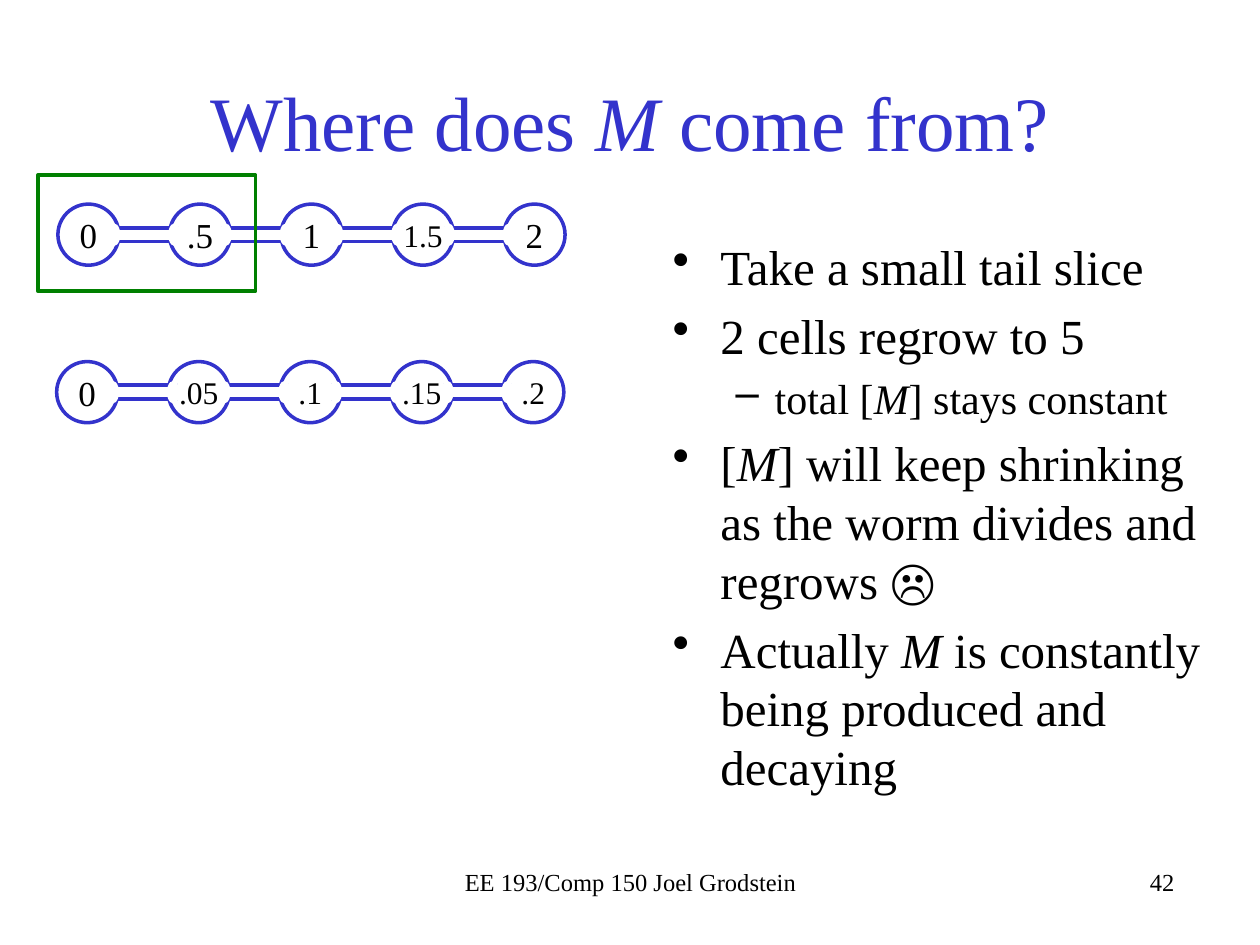
from typing import NamedTuple

from lxml import etree
from pptx import Presentation
from pptx.dml.color import RGBColor
from pptx.enum.shapes import MSO_SHAPE as Preset
from pptx.enum.text import MSO_ANCHOR as Anchor, PP_ALIGN as Align
from pptx.oxml.ns import qn
from pptx.util import Inches, Pt

FONT = "Times New Roman"
COLORS = {"blue": "3333CC", "green": "008000", "white": "FFFFFF", "black": "000000"}
CELL_PITCH, CELL_SIZE = 0.885, 0.485
BRIDGE_WIDTH, BRIDGE_HEIGHT = 0.52, 0.11
OPENING_WIDTH, OPENING_HEIGHT = 0.1, 0.18
OVERHANG = 0.01  # how far an opening reaches out of its cell


class Box(NamedTuple):
    left: float
    top: float
    width: float
    height: float

    def inches(self):
        return [Inches(length) for length in self]


class Worm(NamedTuple):
    left: float
    top: float
    cells: list[tuple[str, int]]  # concentration and its text size


class Bullet(NamedTuple):
    text: str  # every other part between asterisks is italic
    size: int
    mark: str
    margin: float
    hanging: float


WORMS = [
    Worm(0.46, 1.62, [("0", 20), (".5", 20), ("1", 20), ("1.5", 18), ("2", 20)]),
    Worm(0.45, 2.87, [("0", 20), (".05", 18), (".1", 18), (".15", 18), (".2", 18)]),
]
MAIN, SUB = (28, "•", 0.38, 0.38), (24, "–", 0.81, 0.31)
BULLETS = [
    Bullet("Take a small tail slice", *MAIN),
    Bullet("2 cells regrow to 5", *MAIN),
    Bullet("total [*M*] stays constant", *SUB),
    Bullet("[*M*] will keep shrinking as the worm divides and regrows ☹", *MAIN),
    Bullet("Actually *M* is constantly being produced and decaying", *MAIN),
]


def rgb(color: str) -> RGBColor:
    return RGBColor.from_string(COLORS[color])


def write(paragraph, text: str, size: int, color: str = "black", align=Align.LEFT) -> None:
    """Fill a paragraph, setting the parts between asterisks in italics."""
    for index, part in enumerate(text.split("*")):
        if part:
            run = paragraph.add_run()
            run.text = part
            if index % 2:
                run.font.italic = True
    paragraph.alignment = align
    paragraph.font.name, paragraph.font.size = FONT, Pt(size)
    paragraph.font.color.rgb = rgb(color)


def add_text(slide, box: Box, anchor=Anchor.TOP):
    frame = slide.shapes.add_textbox(*box.inches()).text_frame
    frame.word_wrap = True
    frame.vertical_anchor = anchor
    return frame


def add_outline(slide, preset, box: Box, line: str | None, fill: str | None = None):
    shape = slide.shapes.add_shape(preset, *box.inches())
    shape.shadow.inherit = False
    if fill:
        shape.fill.solid()
        shape.fill.fore_color.rgb = rgb(fill)
    else:
        shape.fill.background()
    if line:
        shape.line.color.rgb = rgb(line)
        shape.line.width = Pt(2)
    else:
        shape.line.fill.background()
    return shape


def add_cell(slide, left: float, top: float, label: str, size: int) -> None:
    cell = add_outline(slide, Preset.OVAL, Box(left, top, CELL_SIZE, CELL_SIZE), "blue")
    frame = cell.text_frame
    frame.margin_left = frame.margin_right = frame.margin_top = frame.margin_bottom = 0
    frame.vertical_anchor = Anchor.MIDDLE
    write(frame.paragraphs[0], label, size, align=Align.CENTER)


def add_bridge(slide, cell_left: float, middle: float) -> None:
    """Join a cell to the next one, opening both walls without reaching the labels."""
    cell_right, next_left = cell_left + CELL_SIZE, cell_left + CELL_PITCH
    bridge_left = (cell_right + next_left - BRIDGE_WIDTH) / 2
    bridge = Box(bridge_left, middle - BRIDGE_HEIGHT / 2, BRIDGE_WIDTH, BRIDGE_HEIGHT)
    add_outline(slide, Preset.RECTANGLE, bridge, "blue", "white")
    for left in (cell_right + OVERHANG - OPENING_WIDTH, next_left - OVERHANG):
        opening = Box(left, middle - OPENING_HEIGHT / 2, OPENING_WIDTH, OPENING_HEIGHT)
        add_outline(slide, Preset.OVAL, opening, None, "white")


def add_worm(slide, worm: Worm) -> None:
    cell_lefts = [worm.left + index * CELL_PITCH for index in range(len(worm.cells))]
    for left, (label, size) in zip(cell_lefts, worm.cells):
        add_cell(slide, left, worm.top, label, size)
    for left in cell_lefts[:-1]:
        add_bridge(slide, left, worm.top + CELL_SIZE / 2)


def add_bullet(paragraph, bullet: Bullet) -> None:
    write(paragraph, bullet.text, bullet.size)
    paragraph.space_before = Pt(bullet.size * 0.2)
    properties = paragraph._p.get_or_add_pPr()
    properties.set("marL", str(Inches(bullet.margin)))
    properties.set("indent", str(-Inches(bullet.hanging)))
    mark = etree.Element(qn("a:buChar"), char=bullet.mark)
    properties.find(qn("a:defRPr")).addprevious(mark)


def main() -> None:
    deck = Presentation()
    deck.slide_width, deck.slide_height = Inches(10), Inches(7.5)
    slide = deck.slides.add_slide(deck.slide_layouts[6])

    title = add_text(slide, Box(0.75, 0.33, 8.5, 1.25), Anchor.MIDDLE)
    write(title.paragraphs[0], "Where does *M* come from?", 44, "blue", Align.CENTER)

    body = add_text(slide, Box(5.24, 1.83, 4.46, 4.64))
    for index, bullet in enumerate(BULLETS):
        add_bullet(body.add_paragraph() if index else body.paragraphs[0], bullet)

    footer = add_text(slide, Box(3.42, 6.83, 3.17, 0.34))
    write(footer.paragraphs[0], "EE 193/Comp 150 Joel Grodstein", 14, align=Align.CENTER)
    number = add_text(slide, Box(6.25, 6.83, 3.17, 0.5))
    write(number.paragraphs[0], "42", 14, align=Align.RIGHT)

    for worm in WORMS:
        add_worm(slide, worm)
    add_outline(slide, Preset.RECTANGLE, Box(0.3, 1.39, 1.73, 0.92), "green")

    deck.save("out.pptx")


if __name__ == "__main__":
    main()
